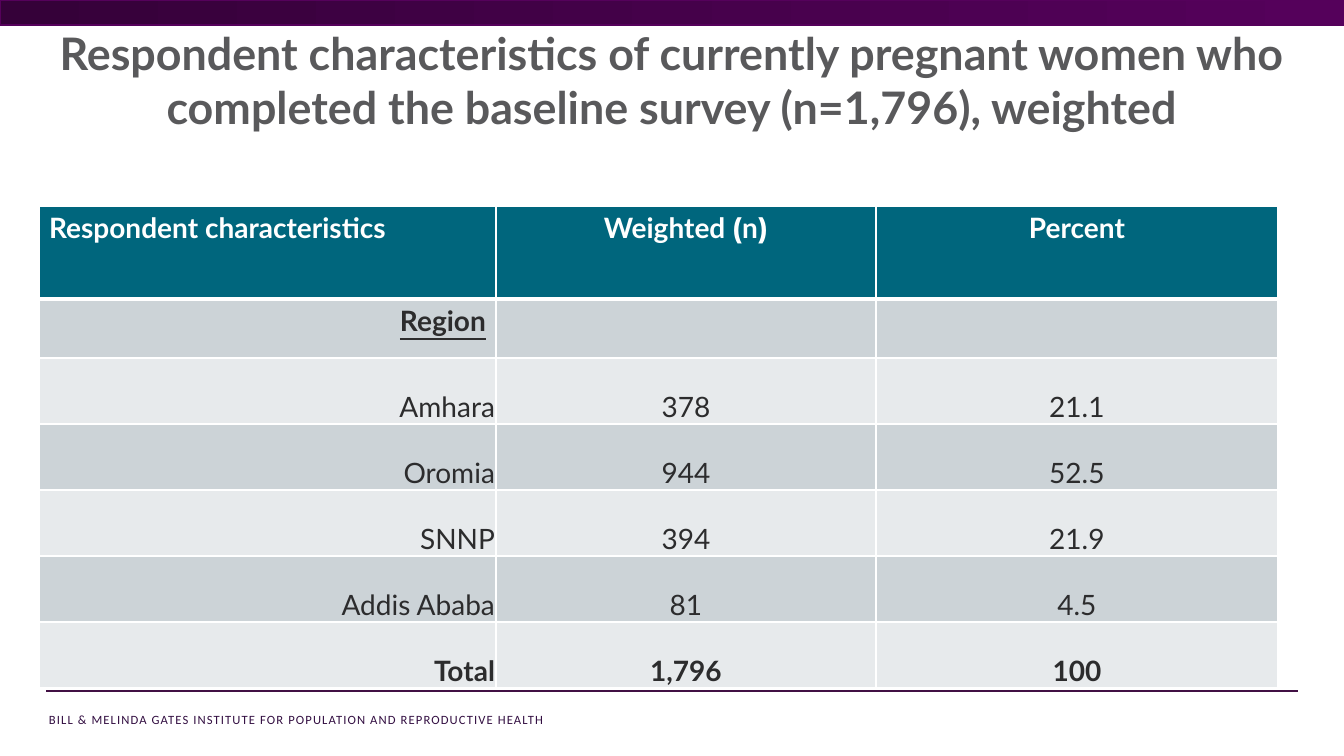
from lxml import etree
from pptx import Presentation
from pptx.dml.color import RGBColor
from pptx.enum.shapes import MSO_CONNECTOR, MSO_SHAPE
from pptx.enum.text import MSO_ANCHOR, PP_ALIGN
from pptx.oxml.ns import qn
from pptx.util import Pt

LEFT, CENTER, RIGHT = PP_ALIGN.LEFT, PP_ALIGN.CENTER, PP_ALIGN.RIGHT
TOP, BOTTOM = MSO_ANCHOR.TOP, MSO_ANCHOR.BOTTOM
STRAIGHT, RECTANGLE = MSO_CONNECTOR.STRAIGHT, MSO_SHAPE.RECTANGLE

TITLE = ("Respondent characteristics of currently pregnant women who "
         "completed the baseline survey (n=1,796), weighted")
FOOTER = "BILL & MELINDA GATES INSTITUTE FOR POPULATION AND REPRODUCTIVE HEALTH"
ROWS = [
    ("Respondent characteristics", "Weighted (n)", "Percent"),
    ("Region", "", ""),
    ("Amhara", "378", "21.1"),
    ("Oromia", "944", "52.5"),
    ("SNNP", "394", "21.9"),
    ("Addis Ababa", "81", "4.5"),
    ("Total", "1,796", "100"),
]
COLUMN_WIDTHS = [457, 380, 402]
ROW_HEIGHTS = [93, 59] + [66] * 5
HEADER_FILL = "00667D"
BAND_FILLS = ["E7EAEC", "CCD3D7"]
INK, WHITE = "2C2C2D", "FFFFFF"
SCALE = 914400 / 100.8


def px(length):
    return round(length * SCALE)


def color(value):
    return RGBColor.from_string(value)


def write(frame, text, size=20, font="Lato", ink=INK, bold=False,
          underline=False, align=LEFT, spacing=None, bracket_font=None):
    frame.word_wrap = True
    para = frame.paragraphs[0]
    para.alignment = align
    pieces = [text]
    if bracket_font:
        pieces = text.replace("(", "\t(\t").replace(")", "\t)").split("\t")
    for piece in pieces:
        span = para.add_run()
        span.text = piece
        span.font.name = bracket_font if piece in ("(", ")") else font
        span.font.size = Pt(size)
        span.font.bold = bold
        span.font.underline = underline
        span.font.color.rgb = color(ink)
        if spacing:
            span.font._element.set("spc", str(spacing))


def add_text(page, place, text, **style):
    box = page.shapes.add_textbox(*map(px, place))
    write(box.text_frame, text, **style)


def add_border(cell, side, width):
    properties = cell._tc.get_or_add_tcPr()
    edge = etree.SubElement(properties, qn("a:ln" + side), w=str(Pt(width)))
    fill = etree.SubElement(edge, qn("a:solidFill"))
    etree.SubElement(fill, qn("a:srgbClr"), val=WHITE)


def add_band(page):
    band = page.shapes.add_shape(RECTANGLE, 0, 0, px(1344), px(25))
    band.shadow.inherit = False
    band.fill.gradient()
    band.fill.gradient_angle = 0
    for stop, value in zip(band.fill.gradient_stops, ("350139", "55015B")):
        stop.color.rgb = color(value)
    band.line.color.rgb = color("55015B")
    band.line.width = Pt(1)


def add_rule(page):
    rule = page.shapes.add_connector(STRAIGHT, px(1298), px(691), px(46), px(691))
    rule.line.color.rgb = color("411044")
    rule.line.width = Pt(1.25)
    etree.SubElement(rule._element.spPr, qn("a:effectLst"))


def fill_cell(cell, text, row, column):
    for side in "LRTB":
        thick = (row, side) in ((0, "B"), (1, "T"))
        add_border(cell, side, 3 if thick else 1)
    cell.fill.solid()
    cell.fill.fore_color.rgb = color(BAND_FILLS[row % 2] if row else HEADER_FILL)
    cell.vertical_anchor = BOTTOM if row > 1 else TOP
    if row > 1:
        cell.margin_left = cell.margin_right = cell.margin_top = px(1)
        cell.margin_bottom = 0
    if text:
        align = CENTER if column else RIGHT if row else LEFT
        write(cell.text_frame, text, ink=INK if row else WHITE,
              bold=row in (0, 1, len(ROWS) - 1), underline=row == 1, align=align,
              bracket_font="Montserrat" if row == 0 else None)


def add_respondent_table(page):
    table = page.shapes.add_table(
        len(ROWS), len(COLUMN_WIDTHS), px(39), px(206),
        px(sum(COLUMN_WIDTHS)), px(sum(ROW_HEIGHTS))).table
    for column, width in zip(table.columns, COLUMN_WIDTHS):
        column.width = px(width)
    for row, height in zip(table.rows, ROW_HEIGHTS):
        row.height = px(height)
    for row, texts in enumerate(ROWS):
        for column, text in enumerate(texts):
            fill_cell(table.cell(row, column), text, row, column)


def main():
    deck = Presentation()
    deck.slide_width, deck.slide_height = px(1344), px(756)
    page = deck.slides.add_slide(deck.slide_layouts[6])
    add_text(page, (39, 707, 744, 25), FOOTER, size=9, font="Calibri",
             ink="330F42", spacing=80)
    add_rule(page)
    add_band(page)
    add_respondent_table(page)
    add_text(page, (0, 21, 1344, 119), TITLE, size=32, ink="59595B",
             bold=True, align=CENTER)
    deck.save("out.pptx")


if __name__ == "__main__":
    main()
